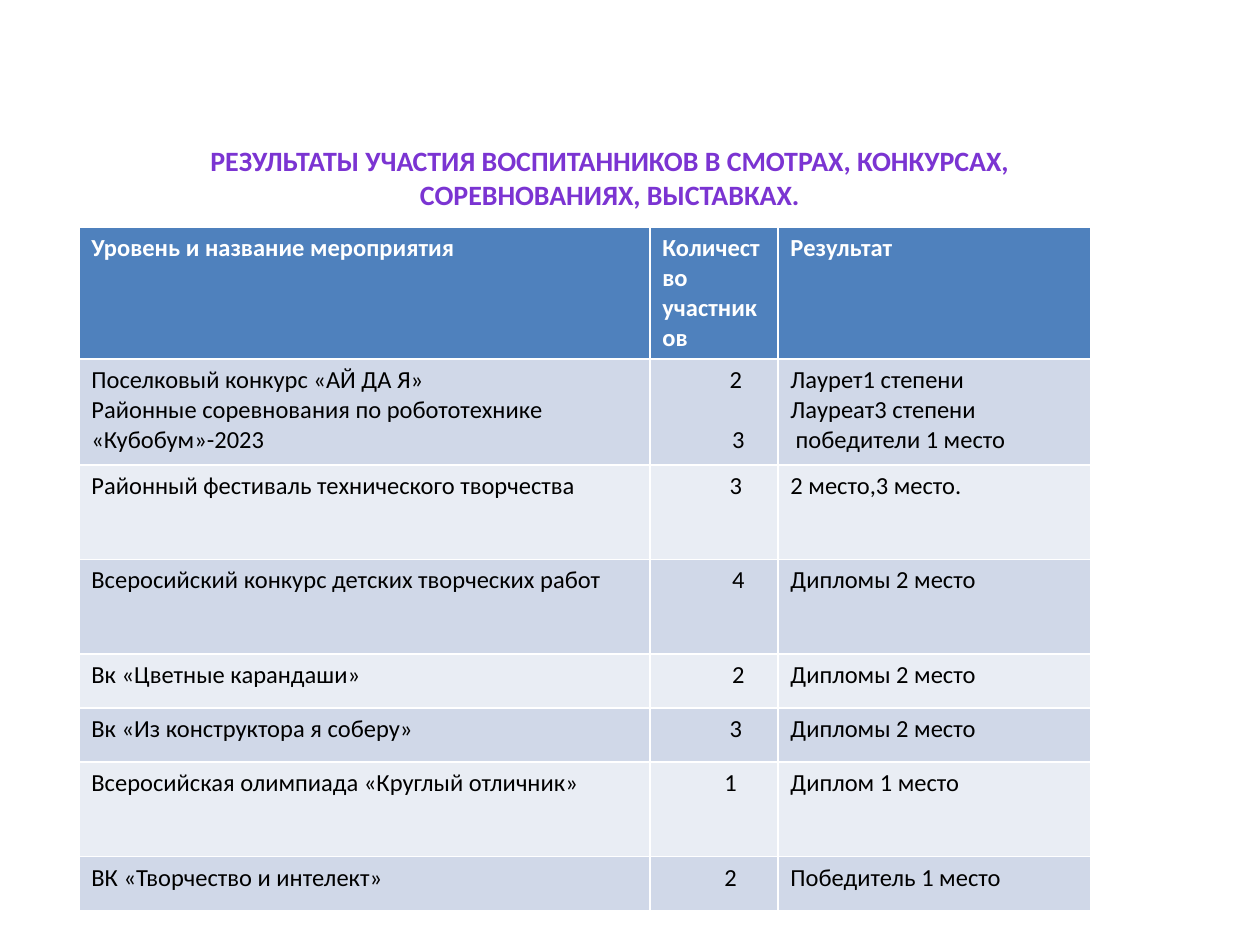
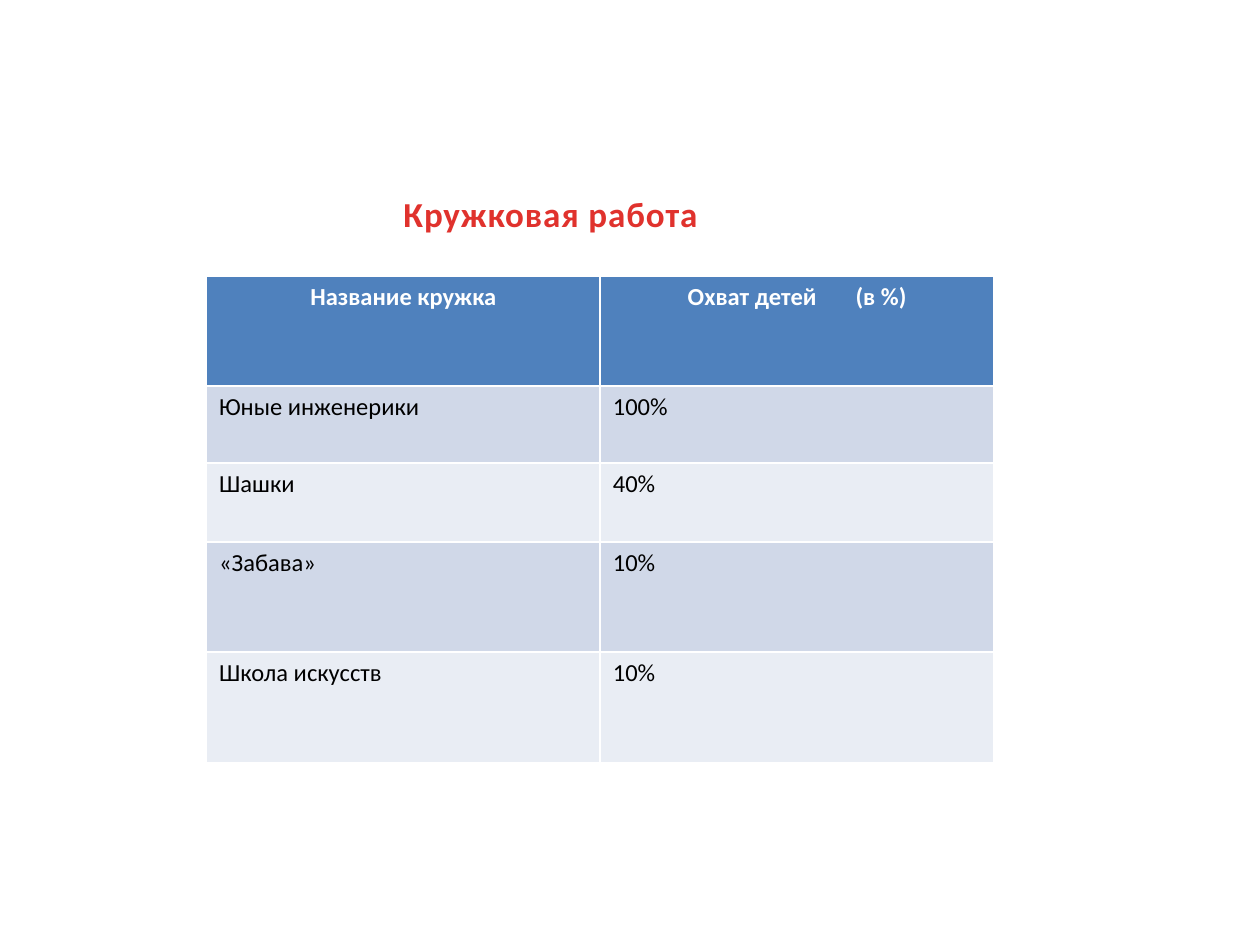
from pptx import Presentation
from pptx.dml.color import RGBColor
from pptx.enum.text import MSO_ANCHOR, MSO_AUTO_SIZE, PP_ALIGN
from pptx.util import Pt

LEFT, CENTER = PP_ALIGN.LEFT, PP_ALIGN.CENTER
TOP = MSO_ANCHOR.TOP
NO_FIT = MSO_AUTO_SIZE.NONE

FONT = "Calibri"
TITLE_ONLY = 5
HEADER_FILL, BANDS = "4F81BD", ("D0D8E8", "E9EDF4")
WHITE, BLACK = "FFFFFF", "000000"
CELL_SIZE, LINE = 14, 17


# Content: a cell is text, or a list of (text, paragraph format)
def count(number, indent, before=0):
    return number, dict(align=CENTER, indent=indent, before=before)


RESULTS = dict(
    title="РЕЗУЛЬТАТЫ УЧАСТИЯ ВОСПИТАННИКОВ В СМОТРАХ, КОНКУРСАХ, "
          "СОРЕВНОВАНИЯХ, ВЫСТАВКАХ.",
    title_box=(78.5, 78.5, 540, 46),
    title_format=dict(size=16, color="7B34D2"),
    origin=(45, 129.7),
    columns=(326.3, 73.2, 179),
    heights=(73.5, 60.5, 54, 54, 31, 31, 54, 31),
    header_align=LEFT,
    rows=[
        ("Уровень и название мероприятия", "Количество участников", "Результат"),
        ([("Поселковый конкурс «АЙ ДА Я»", {}),
          ("Районные соревнования по робототехнике «Кубобум»-2023", {})],
         [count("2", 25), count("3", 28, before=LINE)],
         [("Лаурет1 степени", {}), ("Лауреат3 степени", {}),
          ("победители 1 место", dict(indent=3))]),
        ("Районный фестиваль технического творчества",
         [count("3", 25)], "2 место,3 место."),
        ("Всеросийский конкурс детских творческих работ",
         [count("4", 28)], "Дипломы 2 место"),
        ("Вк «Цветные карандаши»", [count("2", 28)], "Дипломы 2 место"),
        ("Вк «Из конструктора я соберу»", [count("3", 25)], "Дипломы 2 место"),
        ("Всеросийская олимпиада «Круглый отличник»",
         [count("1", 19)], "Диплом 1 место"),
        ("ВК «Творчество и интелект»", [count("2", 19)], "Победитель 1 место"),
    ],
)

CLUBS = dict(
    title="Кружковая работа",
    title_box=(78.5, 106.5, 472.3, 32),
    title_format=dict(size=20, color="E0322D", spacing=0.5),
    origin=(118, 157.7),
    columns=(225, 225),
    heights=(63, 44, 45, 63, 63),
    header_align=CENTER,
    rows=[
        ("Название кружка", [("Охват детей (в %)", dict(wide_before="(в %)"))]),
        ("Юные инженерики", "100%"),
        ("Шашки", "40%"),
        ("«Забава»", "10%"),
        ("Школа искусств", "10%"),
    ],
)


def rgb(value):
    return RGBColor.from_string(value)


def write(para, text, size=CELL_SIZE, color=BLACK, bold=False, align=LEFT,
          indent=0, before=0, spacing=0, wide_before=None):
    """Fill a paragraph; the space ahead of wide_before is stretched."""
    para.alignment = align
    para.space_before = Pt(before)
    if indent:
        properties = para._p.get_or_add_pPr()
        properties.set("marL", str(Pt(indent)))
        properties.set("indent", "0")
    pieces = [(text, spacing)]
    if wide_before:
        head = text[:text.index(wide_before)].rstrip()
        pieces = [(head, spacing), (" ", 19), (wide_before, spacing)]
    for piece, tracking in pieces:
        span = para.add_run()
        span.text = piece
        span.font.name, span.font.size = FONT, Pt(size)
        span.font.bold, span.font.color.rgb = bold, rgb(color)
        if tracking:
            span._r.get_or_add_rPr().set("spc", str(round(tracking * 100)))


def add_title(page, text, box, text_format):
    title = page.shapes.title
    title.left, title.top, title.width, title.height = map(Pt, box)
    frame = title.text_frame
    frame.word_wrap, frame.auto_size, frame.vertical_anchor = True, NO_FIT, TOP
    write(frame.paragraphs[0], text, bold=True, align=CENTER, **text_format)


def add_grid(page, rows, origin, columns, heights, header_align):
    size = (sum(columns), sum(heights))
    table = page.shapes.add_table(len(rows), len(columns),
                                  *map(Pt, origin + size)).table
    for column, width in zip(table.columns, columns):
        column.width = Pt(width)
    for index, (row, height) in enumerate(zip(rows, heights)):
        table.rows[index].height = Pt(height)
        if index == 0:
            fill = HEADER_FILL
            base = dict(color=WHITE, bold=True, align=header_align)
        else:
            fill, base = BANDS[(index - 1) % 2], {}
        for cell, content in zip(table.rows[index].cells, row):
            cell.fill.solid()
            cell.fill.fore_color.rgb = rgb(fill)
            lines = [(content, {})] if isinstance(content, str) else content
            frame = cell.text_frame
            for number, (text, text_format) in enumerate(lines):
                para = frame.add_paragraph() if number else frame.paragraphs[0]
                write(para, text, **{**base, **text_format})


def main():
    deck = Presentation()
    deck.slide_width, deck.slide_height = Pt(720), Pt(540)
    for content in (RESULTS, CLUBS):
        page = deck.slides.add_slide(deck.slide_layouts[TITLE_ONLY])
        add_title(page, content["title"], content["title_box"],
                  content["title_format"])
        add_grid(page, content["rows"], content["origin"], content["columns"],
                 content["heights"], content["header_align"])
    deck.save("out.pptx")


if __name__ == "__main__":
    main()
